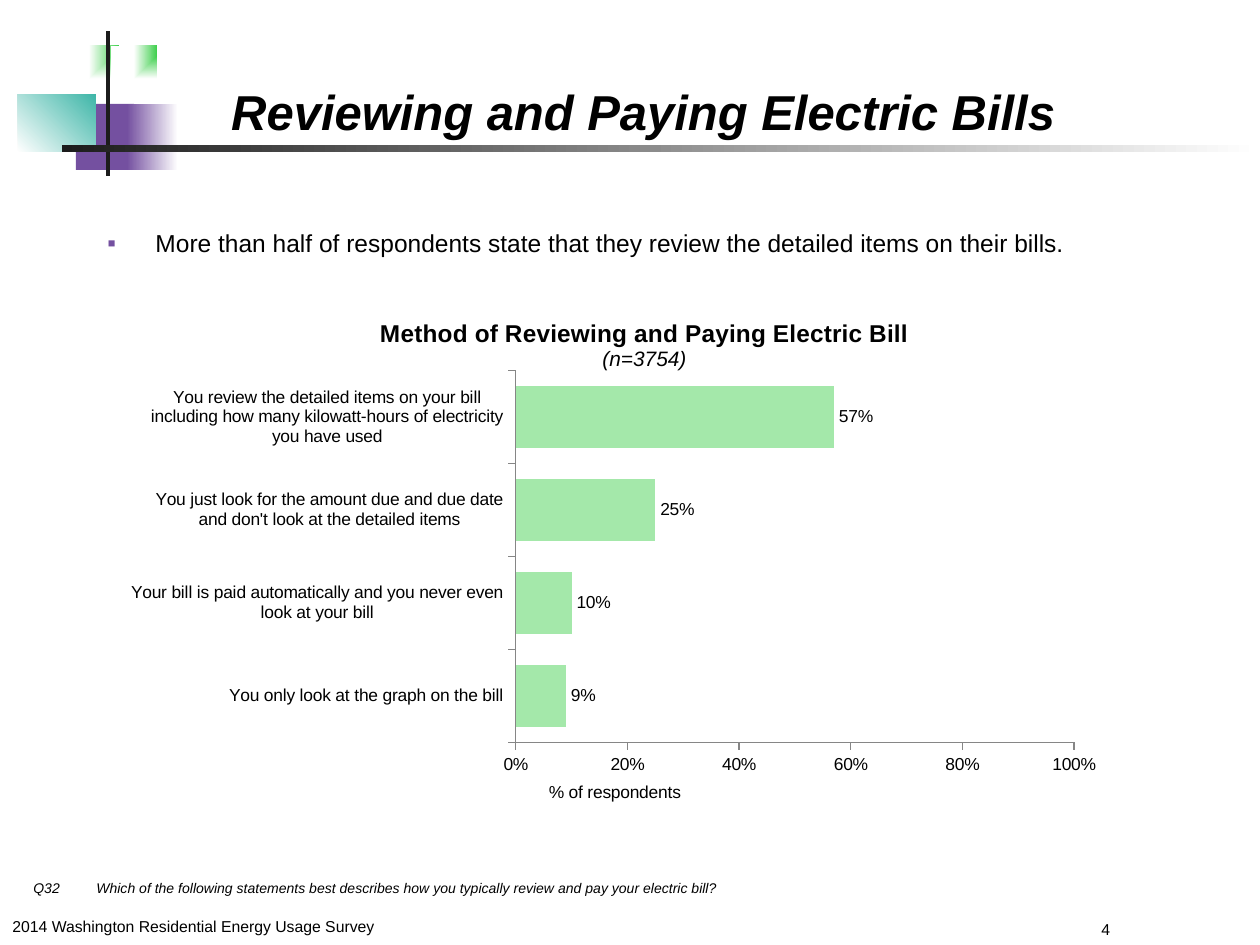
from dataclasses import dataclass

from lxml import etree
from pptx import Presentation
from pptx.chart.data import CategoryChartData
from pptx.dml.color import RGBColor
from pptx.enum import chart as charts, shapes, text
from pptx.oxml import parse_xml
from pptx.oxml.ns import nsdecls, qn
from pptx.util import Pt

SCALE = 914400 / 126


@dataclass(frozen=True)
class Theme:
    font: str = "Arial"
    ink: str = "000000"
    white: str = "FFFFFF"
    dark: str = "1C1C1C"
    green: str = "3FCF4D"
    purple: str = "7450A0"
    teal: str = "3EB6A8"
    bar: str = "A4E8AA"
    axis: str = "868686"
    title: int = 28
    body: int = 14
    subtitle: int = 12
    label: int = 10
    footer: int = 9
    note: int = 8


THEME = Theme()


def px(length):
    return round(length * SCALE)


def place(box):
    return [px(length) for length in box]


def style(font, size, bold=False, italic=False):
    font.name = THEME.font
    font.size = Pt(size)
    font.bold = bold
    font.italic = italic
    font.color.rgb = RGBColor.from_string(THEME.ink)


def write(frame, words, size, bold=False, italic=False, align=text.PP_ALIGN.LEFT,
          anchor=text.MSO_ANCHOR.TOP, tab=None, bullet=None, indent=0):
    frame.word_wrap = True
    frame.auto_size = text.MSO_AUTO_SIZE.NONE
    frame.vertical_anchor = anchor
    paragraph = frame.paragraphs[0]
    paragraph.alignment = align
    properties = paragraph._p.get_or_add_pPr()
    if bullet:
        properties.set("marL", str(px(indent)))
        properties.set("indent", str(-px(indent)))
        colour = etree.SubElement(properties, qn("a:buClr"))
        etree.SubElement(colour, qn("a:srgbClr"), val=THEME.purple)
        etree.SubElement(properties, qn("a:buFont"), typeface=THEME.font)
        etree.SubElement(properties, qn("a:buChar"), char=bullet)
    if tab:
        stops = etree.SubElement(properties, qn("a:tabLst"))
        etree.SubElement(stops, qn("a:tab"), pos=str(px(tab)), algn="l")
    run = paragraph.add_run()
    run.text = words
    style(run.font, size, bold, italic)


def add_text(slide, box, words, size, **options):
    write(slide.shapes.add_textbox(*place(box)).text_frame, words, size, **options)


def add_block(slide, box, start, end=None, angle=None):
    block = slide.shapes.add_shape(shapes.MSO_SHAPE.RECTANGLE, *place(box))
    block.shadow.inherit = False
    block.line.fill.background()
    if end is None:
        block.fill.solid()
        block.fill.fore_color.rgb = RGBColor.from_string(start)
        return
    if angle is None:
        direction = '<a:path path="rect"><a:fillToRect l="100000" b="100000"/></a:path>'
    else:
        direction = f'<a:lin ang="{angle * 60000}" scaled="0"/>'
    gradient = parse_xml(
        f'<a:gradFill {nsdecls("a")} rotWithShape="1"><a:gsLst>'
        f'<a:gs pos="0"><a:srgbClr val="{start}"/></a:gs>'
        f'<a:gs pos="100000"><a:srgbClr val="{end}"/></a:gs>'
        f'</a:gsLst>{direction}</a:gradFill>')
    block._element.spPr.find(qn("a:prstGeom")).addnext(gradient)


def add_ornament(slide, box):
    left, top, width, height = box
    blocks = [
        ((41, 15, 60, 66), THEME.green, THEME.white, None),
        ((93, 15, 46, 66), THEME.green, THEME.white, None),
        ((58, 73, 58, 66), THEME.purple, None, None),
        ((109, 73, 51, 66), THEME.purple, THEME.white, 0),
        ((0, 63, 78, 58), THEME.white, THEME.teal, 315),
        ((88, 0, 4, height), THEME.dark, None, None),
        ((44, 114, width - 44, 7), THEME.dark, THEME.white, 0),
    ]
    for (x, y, w, h), start, end, angle in blocks:
        add_block(slide, (left + x, top + y, w, h), start, end, angle)


def add_title(slide, box):
    title = slide.shapes.title
    title.left, title.top, title.width, title.height = place(box)
    write(title.text_frame, "Reviewing and Paying Electric Bills ", THEME.title, bold=True,
          italic=True, align=text.PP_ALIGN.CENTER, anchor=text.MSO_ANCHOR.BOTTOM)


def set_layout(parent, x, y, w=None, h=None):
    for old in parent.findall(qn("c:layout")):
        parent.remove(old)
    target = '<c:layoutTarget val="inner"/>' if w else ""
    sizes = f'<c:w val="{w}"/><c:h val="{h}"/>' if w else ""
    layout = parse_xml(
        f'<c:layout {nsdecls("c")}><c:manualLayout>{target}'
        f'<c:xMode val="edge"/><c:yMode val="edge"/>'
        f'<c:x val="{x}"/><c:y val="{y}"/>{sizes}</c:manualLayout></c:layout>')
    heading = parent.find(qn("c:tx"))
    if heading is None:
        parent.insert(0, layout)
    else:
        heading.addnext(layout)


def format_axis(axis):
    axis.has_major_gridlines = False
    axis.major_tick_mark = charts.XL_TICK_MARK.OUTSIDE
    axis.format.line.color.rgb = RGBColor.from_string(THEME.axis)
    axis.format.line.width = Pt(0.75)
    style(axis.tick_labels.font, THEME.label)


def add_bill_chart(slide, box):
    answers = CategoryChartData(number_format="0%")
    answers.categories = [
        "You only look at the graph on the bill",
        "Your bill is paid automatically and you never even look at your bill",
        "You just look for the amount due and due date and don't look at the detailed items",
        "You review the detailed items on your bill including how many kilowatt-hours "
        "of electricity you have used",
    ]
    answers.add_series("Series 1", (0.09, 0.10, 0.25, 0.57))
    chart = slide.shapes.add_chart(
        charts.XL_CHART_TYPE.BAR_CLUSTERED, *place(box), answers).chart
    style(chart.font, THEME.label)
    chart.has_legend = False
    chart.has_title = True
    heading = chart.chart_title.text_frame
    write(heading, "Method of Reviewing and Paying Electric Bill", THEME.body, bold=True,
          align=text.PP_ALIGN.CENTER)
    sample = heading.add_paragraph().add_run()
    sample.text = "(n=3754)"
    style(sample.font, THEME.subtitle, italic=True)
    chart.chart_title.include_in_layout = False
    set_layout(chart.chart_title._element, 0.24, 0.04)

    format_axis(chart.category_axis)
    share = chart.value_axis
    format_axis(share)
    share.minimum_scale, share.maximum_scale, share.major_unit = 0, 1, 0.2
    share.tick_labels.number_format = "0%"
    share.tick_labels.number_format_is_linked = False
    write(share.axis_title.text_frame, "% of respondents", THEME.label)
    set_layout(share.axis_title._element, 0.41, 0.95)

    plot = chart.plots[0]
    set_layout(plot._element.getparent(), 0.38, 0.15, 0.56, 0.73)
    plot.gap_width = 49
    plot.vary_by_categories = False
    bars = plot.series[0]
    bars.format.fill.solid()
    bars.format.fill.fore_color.rgb = RGBColor.from_string(THEME.bar)
    plot.has_data_labels = True
    labels = plot.data_labels
    labels.show_value = True
    labels.number_format = "0%"
    labels.number_format_is_linked = False
    labels.position = charts.XL_LABEL_POSITION.OUTSIDE_END
    style(labels.font, THEME.label)


def add_footer(slide, box):
    left, top, width, height = box
    add_text(slide, (left + 21, top, 1197, 30),
             "Q32\tWhich of the following statements best describes how you typically "
             "review and pay your electric bill?", THEME.note, italic=True, tab=63)
    add_text(slide, (left, top + 38, 410, 32),
             "2014 Washington Residential Energy Usage Survey", THEME.footer)
    add_text(slide, (left + width - 171, top + 41, 171, 30), "4", THEME.footer)


def main():
    deck = Presentation()
    deck.slide_width, deck.slide_height = px(1260), px(945)
    slide = deck.slides.add_slide(deck.slide_layouts[5])
    add_ornament(slide, (18, 31, 1242, 145))
    add_title(slide, (71, -10, 1158, 157))
    add_text(slide, (95, 222, 1165, 53),
             "More than half of respondents state that they review the detailed items "
             "on their bills.", THEME.body, bullet="▪", indent=48)
    add_bill_chart(slide, (131, 294, 1003, 514))
    add_footer(slide, (0, 873, 1260, 72))
    deck.save("out.pptx")


if __name__ == "__main__":
    main()
